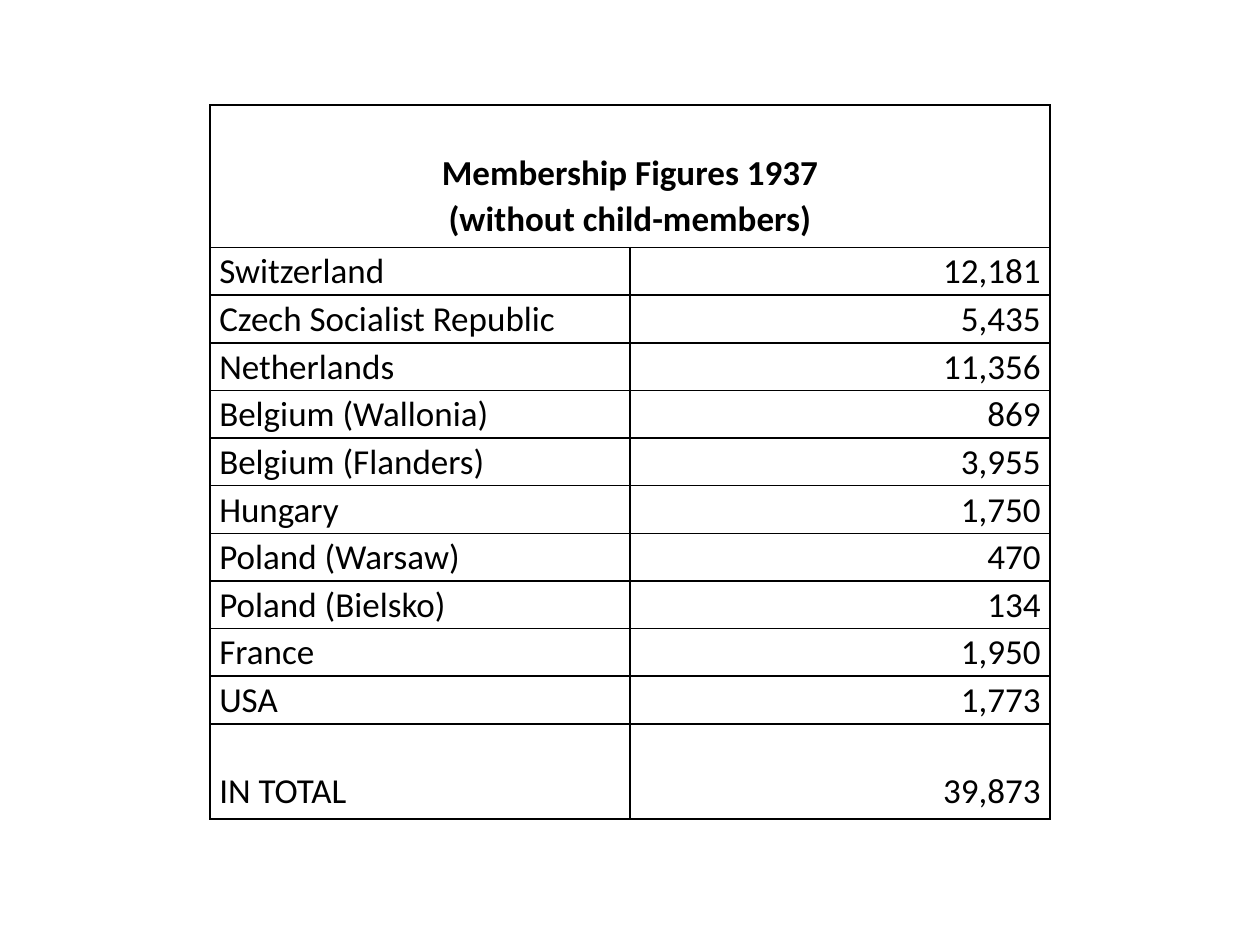
from lxml import etree
from pptx import Presentation
from pptx.dml.color import RGBColor
from pptx.enum.text import PP_ALIGN
from pptx.oxml.ns import qn
from pptx.util import Cm, Pt

LEFT, MID, RIGHT = PP_ALIGN.LEFT, PP_ALIGN.CENTER, PP_ALIGN.RIGHT
BLACK = "000000"
COL, ROW = Cm(8.47), Cm(0.96)
HEAD_ROW, SUM_ROW = Cm(2.87), Cm(1.92)
SIDE, DROP = Cm(0.19), Cm(0.88)

TITLE = "Membership Figures 1937\n(without child-members)"
MEMBERS = [
    ("Switzerland", "12,181"),
    ("Czech Socialist Republic", "5,435"),
    ("Netherlands", "11,356"),
    ("Belgium (Wallonia)", "869"),
    ("Belgium (Flanders)", "3,955"),
    ("Hungary", "1,750"),
    ("Poland (Warsaw)", "470"),
    ("Poland (Bielsko)", "134"),
    ("France", "1,950"),
    ("USA", "1,773"),
    ("IN TOTAL", "39,873"),
]


def color(code):
    return RGBColor.from_string(code)


def frame_cell(cell):
    """Give the cell thin black borders and no fill."""
    props = cell._tc.get_or_add_tcPr()
    for side in ("lnL", "lnR", "lnT", "lnB"):
        line = etree.SubElement(props, qn(f"a:{side}"), w=str(Pt(1)))
        fill = etree.SubElement(line, qn("a:solidFill"))
        etree.SubElement(fill, qn("a:srgbClr"), val=BLACK)
    cell.fill.background()


def write_cell(cell, text, align, bold=False, top=0):
    cell.margin_left = cell.margin_right = SIDE
    cell.margin_top, cell.margin_bottom = top, 0
    cell.text_frame.text = text
    for para in cell.text_frame.paragraphs:
        para.alignment = align
        para.line_spacing = 1.07
        for run in para.runs:
            font = run.font
            font.name, font.size, font.bold = "Calibri", Pt(20), bold
            font.color.rgb = color(BLACK)


def add_figures(slide):
    heights = [HEAD_ROW] + [ROW] * (len(MEMBERS) - 1) + [SUM_ROW]
    table = slide.shapes.add_table(
        len(heights), 2, Cm(4.23), Cm(2.12), 2 * COL, sum(heights)
    ).table
    for col in table.columns:
        col.width = COL
    for row, height in zip(table.rows, heights):
        row.height = height
    for cell in table.iter_cells():
        frame_cell(cell)

    head = table.cell(0, 0)
    head.merge(table.cell(0, 1))
    write_cell(head, TITLE, MID, bold=True, top=DROP)
    for i, (place, count) in enumerate(MEMBERS, 1):
        top = DROP if i == len(MEMBERS) else 0
        write_cell(table.cell(i, 0), place, LEFT, top=top)
        write_cell(table.cell(i, 1), count, RIGHT, top=top)


def main():
    deck = Presentation()
    deck.slide_width, deck.slide_height = Cm(25.4), Cm(19.05)
    slide = deck.slides.add_slide(deck.slide_layouts[6])
    add_figures(slide)
    deck.save("out.pptx")


if __name__ == "__main__":
    main()
